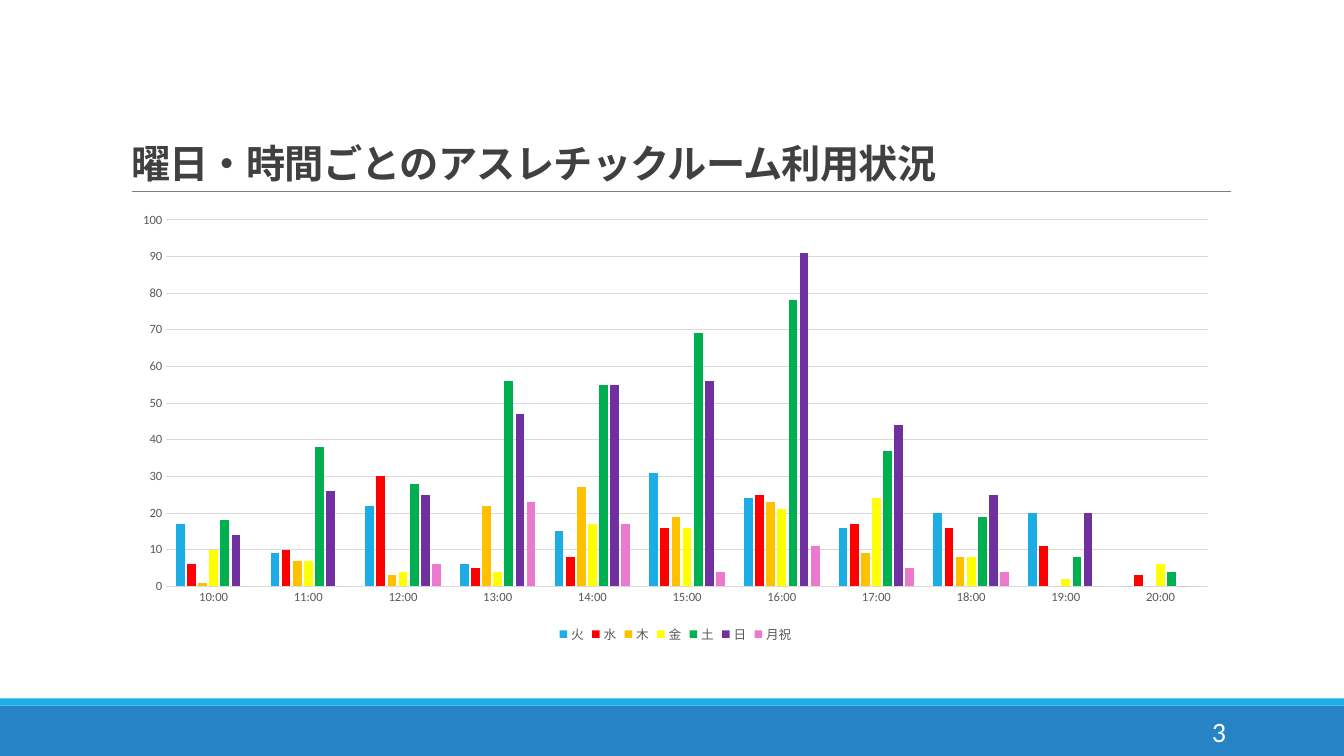
from pptx import Presentation
from pptx.chart.data import CategoryChartData as Data
from pptx.dml.color import RGBColor as Rgb
from pptx.enum.chart import XL_CHART_TYPE as Kind, XL_LEGEND_POSITION as Spot
from pptx.enum.chart import XL_TICK_MARK as Tick
from pptx.enum.shapes import MSO_CONNECTOR as Line, MSO_SHAPE as Form
from pptx.enum.text import MSO_ANCHOR as Anchor, MSO_AUTO_SIZE as Fit, PP_ALIGN as Align
from pptx.oxml.ns import qn
from pptx.util import Inches, Pt

# Content
TITLE = "曜日・時間ごとのアスレチックルーム利用状況"
PAGE = "3"
HOURS = [f"{hour}:00" for hour in range(10, 21)]
DAYS = {
    "火": ("sky", (17, 9, 22, 6, 15, 31, 24, 16, 20, 20, 0)),
    "水": ("red", (6, 10, 30, 5, 8, 16, 25, 17, 16, 11, 3)),
    "木": ("gold", (1, 7, 3, 22, 27, 19, 23, 9, 8, 0, 0)),
    "金": ("yellow", (10, 7, 4, 4, 17, 16, 21, 24, 8, 2, 6)),
    "土": ("green", (18, 38, 28, 56, 55, 69, 78, 37, 19, 8, 4)),
    "日": ("purple", (14, 26, 25, 47, 55, 56, 91, 44, 25, 20, 0)),
    "月祝": ("pink", (0, 0, 6, 23, 17, 4, 11, 5, 4, 0, 0)),
}
HEX = {
    "sky": "1CADE4", "red": "FF0000", "gold": "FFC000", "yellow": "FFFF00",
    "green": "00B050", "purple": "7030A0", "pink": "EB79CD", "blue": "2683C6",
    "white": "FFFFFF", "ink": "404040", "label": "595959", "rule": "808080",
    "grid": "D9D9D9",
}
LATIN, KANJI = "Calibri", "Noto Sans CJK JP"

# Layout in inches
WIDE, HIGH = 13.33, 7.5
LEFT, SPAN = 1.2, 11
RULE = 1.9
FOOT, EDGE = 0.5, 0.07


def tint(name):
    return Rgb.from_string(HEX[name])


def box(x, y, w, h):
    return [Inches(v) for v in (x, y, w, h)]


def style(font, size, color, bold=False, face=LATIN):
    font.size, font.bold, font.name = Pt(size), bold, face
    font.color.rgb = tint(color)


def write(shape, text, align=Align.LEFT, anchor=Anchor.MIDDLE, lead=1.0,
          track=0, **look):
    frame = shape.text_frame
    frame.word_wrap, frame.auto_size = True, Fit.NONE
    frame.vertical_anchor = anchor
    para = frame.paragraphs[0]
    para.alignment, para.line_spacing = align, lead
    run = para.add_run()
    run.text = text
    style(run.font, **look)
    props = run.font._element
    props.set("spc", str(round(track * 100)))
    east = props.makeelement(qn("a:ea"), {"typeface": KANJI})
    props.find(qn("a:latin")).addnext(east)


def band(slide, y, h, color):
    bar = slide.shapes.add_shape(Form.RECTANGLE, *box(0, y, WIDE, h))
    bar.shadow.inherit = False
    bar.fill.solid()
    bar.fill.fore_color.rgb = tint(color)
    bar.line.fill.background()


def plot(slide):
    data = Data()
    data.categories = HOURS
    for day, (_, vals) in DAYS.items():
        data.add_series(day, vals)
    area = box(LEFT, 2.02, SPAN, 4.4)
    chart = slide.shapes.add_chart(Kind.COLUMN_CLUSTERED, *area, data).chart
    chart.has_title = False
    style(chart.font, 10, "label")

    # Columns
    group = chart.plots[0]
    group.gap_width, group.overlap = 219, -27
    group.vary_by_categories = False
    for series, (color, _) in zip(group.series, DAYS.values()):
        series.invert_if_negative = False
        series.format.fill.solid()
        series.format.fill.fore_color.rgb = tint(color)

    # Axes
    base, scale = chart.category_axis, chart.value_axis
    for axis in (base, scale):
        axis.major_tick_mark = axis.minor_tick_mark = Tick.NONE
        style(axis.tick_labels.font, 9, "label")
    scale.minimum_scale, scale.maximum_scale, scale.major_unit = 0, 100, 10
    scale.has_major_gridlines = True
    scale.format.line.fill.background()
    for edge in (base.format.line, scale.major_gridlines.format.line):
        edge.color.rgb, edge.width = tint("grid"), Pt(0.75)

    # Legend
    chart.has_legend = True
    chart.legend.position = Spot.BOTTOM
    chart.legend.include_in_layout = False
    style(chart.legend.font, 9, "label")


def main():
    deck = Presentation()
    deck.slide_width, deck.slide_height = Inches(WIDE), Inches(HIGH)
    slide = deck.slides.add_slide(deck.slide_layouts[5])

    # Footer bands
    band(slide, HIGH - FOOT, FOOT, "blue")
    band(slide, HIGH - FOOT - EDGE, EDGE, "sky")

    # Title and rule
    title = slide.shapes.title
    title.left, title.top, title.width, title.height = box(LEFT, 0.31, SPAN, RULE - 0.31)
    write(title, TITLE, anchor=Anchor.BOTTOM, lead=0.85, track=-0.5,
          size=28, color="ink", bold=True, face=KANJI)
    ends = box(1.31, RULE, 12.21, RULE)
    rule = slide.shapes.add_connector(Line.STRAIGHT, *ends)
    rule.line.color.rgb, rule.line.width = tint("rule"), Pt(0.5)
    props = rule._element.spPr
    props.append(props.makeelement(qn("a:effectLst"), {}))

    # Chart and page number
    plot(slide)
    page = slide.shapes.add_textbox(*box(10.83, 7.06, 1.43, 0.4))
    write(page, PAGE, align=Align.RIGHT, size=20, color="white")
    deck.save("out.pptx")


if __name__ == "__main__":
    main()
